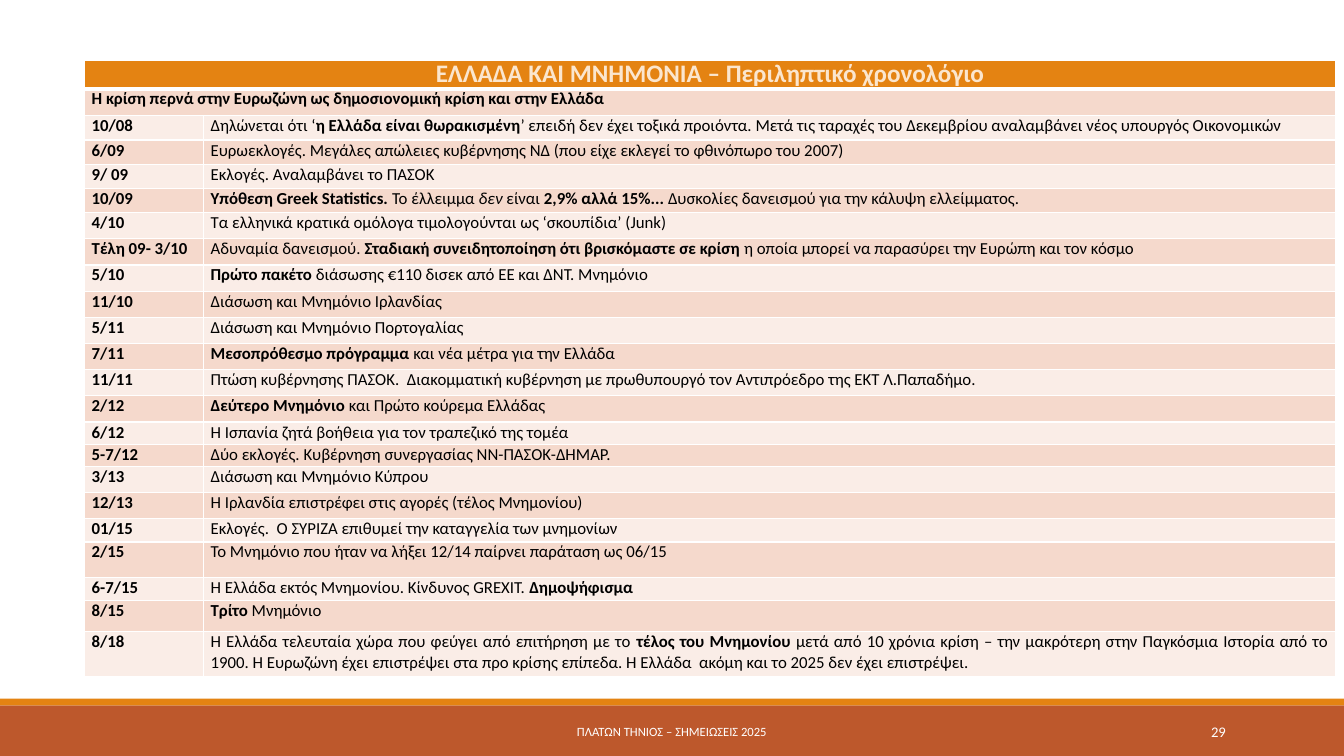
from lxml.etree import SubElement
from pptx import Presentation
from pptx.dml.color import RGBColor
from pptx.enum.shapes import MSO_SHAPE
from pptx.enum.text import MSO_ANCHOR, PP_ALIGN
from pptx.oxml.ns import qn
from pptx.util import Inches, Pt

WIDTH, HEIGHT = Inches(13.333), Inches(7.5)
FONT = "Calibri"
ORANGE, RUST, WHITE, BLACK, CREAM = "E48312", "BD582C", "FFFFFF", "000000", "FBE6CE"
BANDS = ("FAEDE7", "F5D9CC")
COLUMNS = (1.18, 11.23)

# Row height, date, event; *bold* and _italic_ mark the emphasis
TITLE = (0.28, "*ΕΛΛΑΔΑ ΚΑΙ ΜΝΗΜΟΝΙΑ – Περιληπτικό χρονολόγιο*")
SUBTITLE = (0.27, "*Η κρίση περνά στην Ευρωζώνη ως δημοσιονομική κρίση και στην Ελλάδα*")
EVENTS = [
    (0.24, "10/08", "Δηλώνεται ότι ‘*η Ελλάδα είναι θωρακισμένη*’ επειδή δεν έχει τοξικά προιόντα. "
     "Μετά τις ταραχές του Δεκεμβρίου αναλαμβάνει νέος υπουργός Οικονομικών "),
    (0.24, "6/09", "Ευρωεκλογές. Μεγάλες απώλειες κυβέρνησης ΝΔ (που είχε εκλεγεί το φθινόπωρο του 2007)"),
    (0.24, "9/ 09", "Εκλογές. Αναλαμβάνει το ΠΑΣΟΚ "),
    (0.24, "10/09", "*Υπόθεση Greek Statistics. *To έλλειμμα _δεν_ είναι *2,9% αλλά 15%... *"
     "Δυσκολίες δανεισμού για την κάλυψη ελλείμματος."),
    (0.26, "4/10", "Τα ελληνικά κρατικά ομόλογα τιμολογούνται ως ‘σκουπίδια’ (Junk)"),
    (0.26, "Τέλη 09- 3/10 ", "Αδυναμία δανεισμού. *Σταδιακή συνειδητοποίηση ότι βρισκόμαστε σε κρίση *"
     "η οποία μπορεί να παρασύρει την Ευρώπη και τον κόσμο"),
    (0.26, "5/10", "*Πρώτο πακέτο *διάσωσης €110 δισεκ από ΕΕ και ΔΝΤ. Μνημόνιο"),
    (0.26, "11/10", "Διάσωση και Μνημόνιο Ιρλανδίας"),
    (0.26, "5/11", "Διάσωση και Μνημόνιο Πορτογαλίας"),
    (0.26, "7/11", "*Μεσοπρόθεσμο πρόγραμμα* και νέα μέτρα για την Ελλάδα"),
    (0.26, "11/11", "Πτώση κυβέρνησης ΠΑΣΟΚ.  Διακομματική κυβέρνηση με πρωθυπουργό "
     "τον Αντιπρόεδρο της ΕΚΤ Λ.Παπαδήμο."),
    (0.26, "2/12", "*Δεύτερο Μνημόνιο *και Πρώτο κούρεμα Ελλάδας"),
    (0.22, "6/12", "Η Ισπανία ζητά βοήθεια για τον τραπεζικό της τομέα"),
    (0.22, "5-7/12", "Δύο εκλογές. Κυβέρνηση συνεργασίας ΝΝ-ΠΑΣΟΚ-ΔΗΜΑΡ. "),
    (0.26, "3/13", "Διάσωση και Μνημόνιο Κύπρου"),
    (0.26, "12/13", "Η Ιρλανδία επιστρέφει στις αγορές (τέλος Μνημονίου)"),
    (0.23, "01/15", "Εκλογές.  Ο ΣΥΡΙΖΑ επιθυμεί την καταγγελία των μνημονίων"),
    (0.35, "2/15", "Το Μνημόνιο που ήταν να λήξει 12/14 παίρνει παράταση ως 06/15"),
    (0.23, "6-7/15", "Η Ελλάδα εκτός Μνημονίου. Κίνδυνος GREXIT. *Δημοψήφισμα*"),
    (0.31, "8/15", "*Τρίτο* Μνημόνιο"),
    (0.45, "8/18", "Η Ελλάδα τελευταία χώρα που φεύγει από επιτήρηση με το *τέλος του Μνημονίου *"
     "μετά από 10 χρόνια κρίση – την μακρότερη στην Παγκόσμια Ιστορία από το 1900. "
     "Η Ευρωζώνη έχει επιστρέψει στα προ κρίσης επίπεδα. "
     "Η Ελλάδα  ακόμη και το 2025 δεν έχει επιστρέψει."),
]


def color(value):
    return RGBColor.from_string(value)


def write(frame, text, size=12, ink=BLACK, align=PP_ALIGN.JUSTIFY, after=0, spacing=1.0):
    """Fill the first paragraph, turning the emphasis marks into spans."""
    para = frame.paragraphs[0]
    para.alignment = align
    para.space_after = Pt(after)
    para.line_spacing = spacing
    for bold_index, chunk in enumerate(text.split("*")):
        for italic_index, piece in enumerate(chunk.split("_")):
            if piece:
                span = para.add_run()
                span.text = piece
                span.font.name = FONT
                span.font.size = Pt(size)
                span.font.color.rgb = color(ink)
                span.font.bold = bold_index % 2 == 1
                span.font.italic = italic_index % 2 == 1


def add_band(page, top, height, fill):
    """Full-width bar, placed by shares of the slide height."""
    band = page.shapes.add_shape(MSO_SHAPE.RECTANGLE, 0, int(HEIGHT * top), WIDTH, int(HEIGHT * height))
    band.shadow.inherit = False
    band.fill.solid()
    band.fill.fore_color.rgb = color(fill)
    band.line.fill.background()


def add_footer(page, left, width, text, **style):
    box = page.shapes.add_textbox(Inches(left), Inches(7.06), Inches(width), Inches(0.4))
    box.text_frame.word_wrap = True
    box.text_frame.vertical_anchor = MSO_ANCHOR.MIDDLE
    write(box.text_frame, text, ink=WHITE, **style)


def format_cell(cell, fill, bottom=1):
    cell.margin_left = cell.margin_right = Inches(0.07)
    cell.margin_top = cell.margin_bottom = 0
    properties = cell._tc.get_or_add_tcPr()
    for side, points in (("L", 1), ("R", 1), ("T", 1), ("B", bottom)):
        border = SubElement(properties, qn(f"a:ln{side}"), w=str(Pt(points)))
        SubElement(SubElement(border, qn("a:solidFill")), qn("a:srgbClr"), val=WHITE)
    cell.fill.solid()
    cell.fill.fore_color.rgb = color(fill)


def add_timeline(page):
    rows = [TITLE, SUBTITLE, *EVENTS]
    height = sum(row[0] for row in rows)
    table = page.shapes.add_table(len(rows), len(COLUMNS), Inches(0.84), Inches(0.6),
                                  Inches(sum(COLUMNS)), Inches(height)).table
    for column, width in zip(table.columns, COLUMNS):
        column.width = Inches(width)
    for index, (row_height, *texts) in enumerate(rows):
        is_title = index == 0
        table.rows[index].height = Inches(row_height)
        cells = [table.cell(index, column) for column in range(len(COLUMNS))]
        for cell in cells:
            format_cell(cell, ORANGE if is_title else BANDS[index % 2], bottom=3 if is_title else 1)
        if is_title:
            cells[0].merge(cells[1])
            write(cells[0].text_frame, texts[0], size=18, ink=CREAM,
                  align=PP_ALIGN.CENTER, after=4, spacing=0.9)
        elif len(texts) == 1:
            cells[0].merge(cells[1])
            write(cells[0].text_frame, texts[0], after=4)
        else:
            date, event = texts
            write(cells[0].text_frame, f"*{date}*", after=4)
            write(cells[1].text_frame, event, after=4)


def main():
    deck = Presentation()
    deck.slide_width, deck.slide_height = WIDTH, HEIGHT
    page = deck.slides.add_slide(deck.slide_layouts[6])

    # Footer bars and texts
    add_band(page, 0.933, 0.067, RUST)
    add_band(page, 0.924, 0.009, ORANGE)
    add_footer(page, 4.03, 5.27, "ΠΛΑΤΩΝ ΤΗΝΙΟΣ – ΣΗΜΕΙΩΣΕΙΣ 2025", size=9, align=PP_ALIGN.CENTER)
    add_footer(page, 10.83, 1.43, "29", size=10.5, align=PP_ALIGN.RIGHT)

    # Chronology
    add_timeline(page)
    deck.save("out.pptx")


if __name__ == "__main__":
    main()
